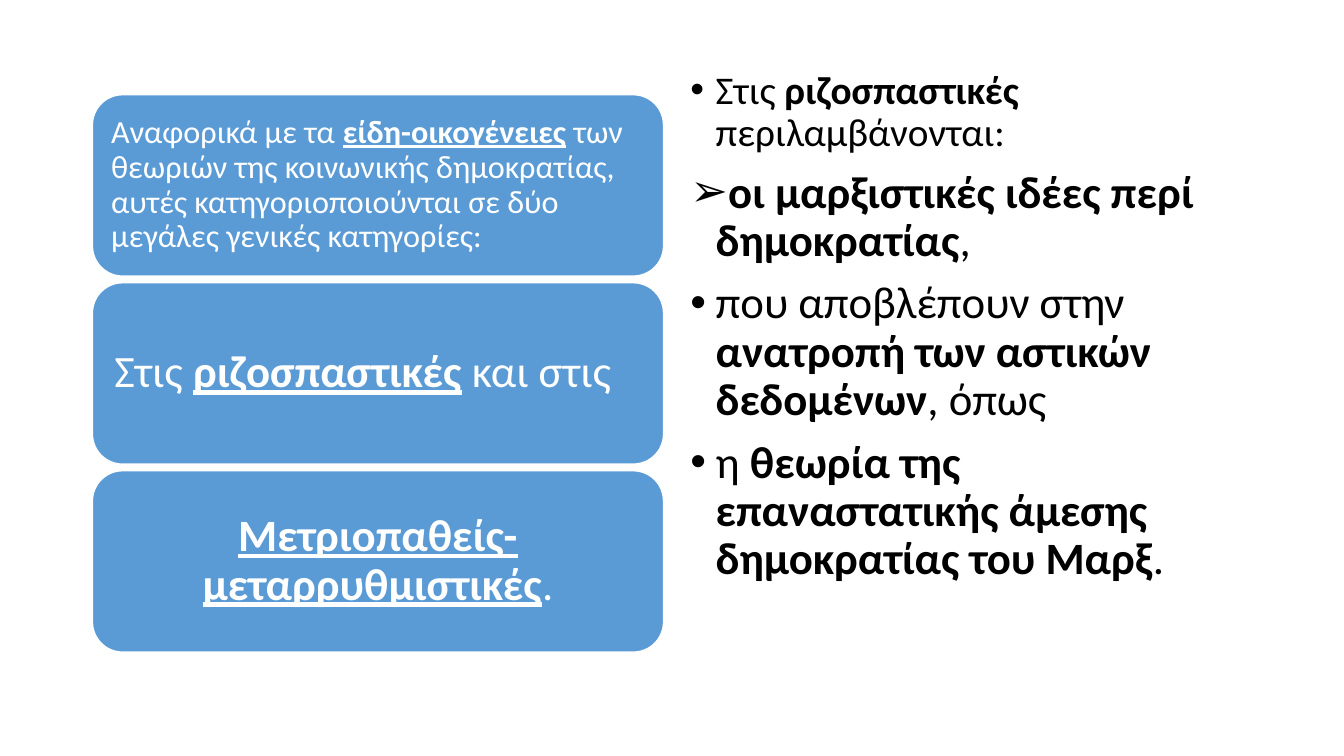
from lxml import etree
from pptx import Presentation
from pptx import util as u
from pptx.dml.color import RGBColor
from pptx.enum import shapes, text
from pptx.oxml.ns import qn

COLORS = {"card": "5B9BD5", "paper": "FFFFFF", "ink": "000000"}
FONT = "Calibri"
COLS, ROWS = 160, 100

CARD_LEFT, CARD_TOP, CARD_W, CARD_H, CARD_STEP = 11, 12.53, 68, 24, 24.87
# Text between asterisks is emphasised: (text, size, inset in inches, alignment)
CARDS = [
    ("Αναφορικά με τα *είδη-οικογένειες* των θεωριών της κοινωνικής δημοκρατίας, "
     "αυτές κατηγοριοποιούνται σε δύο μεγάλες γενικές κατηγορίες:",
     23, 0.1, text.PP_ALIGN.LEFT),
    ("Στις *ριζοσπαστικές* και στις", 32, 0.13, text.PP_ALIGN.LEFT),
    ("*Μετριοπαθείς- μεταρρυθμιστικές*.", 32, 0.13, text.PP_ALIGN.CENTER),
]
BULLETS = [
    ("•", "Στις *ριζοσπαστικές* περιλαμβάνονται:", 28),
    ("➢", "*οι μαρξιστικές ιδέες περί δημοκρατίας*,", 32),
    ("•", "που αποβλέπουν στην *ανατροπή των αστικών δεδομένων*, όπως", 32),
    ("•", "η *θεωρία της επαναστατικής άμεσης δημοκρατίας του Μαρξ*.", 32),
]


class Deck:
    def __init__(self):
        self.prs = Presentation()
        self.prs.slide_width, self.prs.slide_height = u.Inches(13.333), u.Inches(7.5)
        self.slide = self.prs.slides.add_slide(self.prs.slide_layouts[1])
        title = self.slide.shapes.title._element
        title.getparent().remove(title)

    def box(self, col, row, width, height):
        """Turn grid units into left, top, width and height."""
        dx, dy = self.prs.slide_width / COLS, self.prs.slide_height / ROWS
        return [int(n) for n in (col * dx, row * dy, width * dx, height * dy)]

    def color(self, name):
        return RGBColor.from_string(COLORS[name])

    def add_runs(self, p, marked, size, color, underline=False):
        """Fill a paragraph, making the parts between asterisks bold."""
        p.line_spacing = 0.9
        p.font.name, p.font.size = FONT, u.Pt(size)
        p.font.color.rgb = self.color(color)
        for i, part in enumerate(marked.split("*")):
            if part:
                r = p.add_run()
                r.text = part
                r.font.name, r.font.size = FONT, u.Pt(size)
                r.font.color.rgb = self.color(color)
                r.font.bold = i % 2 == 1
                r.font.underline = underline and i % 2 == 1

    def card(self, row, marked, size, inset, align):
        sp = self.slide.shapes.add_shape(
            shapes.MSO_SHAPE.ROUNDED_RECTANGLE, *self.box(CARD_LEFT, row, CARD_W, CARD_H))
        sp.shadow.inherit = False
        sp.fill.solid()
        sp.fill.fore_color.rgb = self.color("card")
        sp.line.color.rgb = self.color("paper")
        sp.line.width = u.Pt(1)
        tf = sp.text_frame
        tf.word_wrap = True
        tf.vertical_anchor = text.MSO_ANCHOR.MIDDLE
        tf.margin_left = tf.margin_right = u.Inches(inset)
        tf.margin_top = tf.margin_bottom = u.Inches(inset)
        p = tf.paragraphs[0]
        p.alignment = align
        self.add_runs(p, marked, size, "paper", underline=True)

    def bullets(self, items, *cells):
        sp = self.slide.placeholders[1]
        sp.left, sp.top, sp.width, sp.height = self.box(*cells)
        tf = sp.text_frame
        tf.word_wrap = True
        tf.auto_size = text.MSO_AUTO_SIZE.NONE
        tf.vertical_anchor = text.MSO_ANCHOR.TOP
        for i, (mark, marked, size) in enumerate(items):
            p = tf.add_paragraph() if i else tf.paragraphs[0]
            p.space_before = u.Pt(10)
            self.add_runs(p, marked, size, "ink")
            pPr = p._p.get_or_add_pPr()
            pPr.set("marL", str(u.Inches(0.25)))
            pPr.set("indent", str(-u.Inches(0.25)))
            bullet = etree.Element(qn("a:buChar"), char=mark)
            pPr.find(qn("a:defRPr")).addprevious(bullet)


def main():
    deck = Deck()
    for i, card in enumerate(CARDS):
        deck.card(CARD_TOP + i * CARD_STEP, *card)
    deck.bullets(BULLETS, 81, 8.67, 68, 81.33)
    deck.prs.save("out.pptx")


if __name__ == "__main__":
    main()
